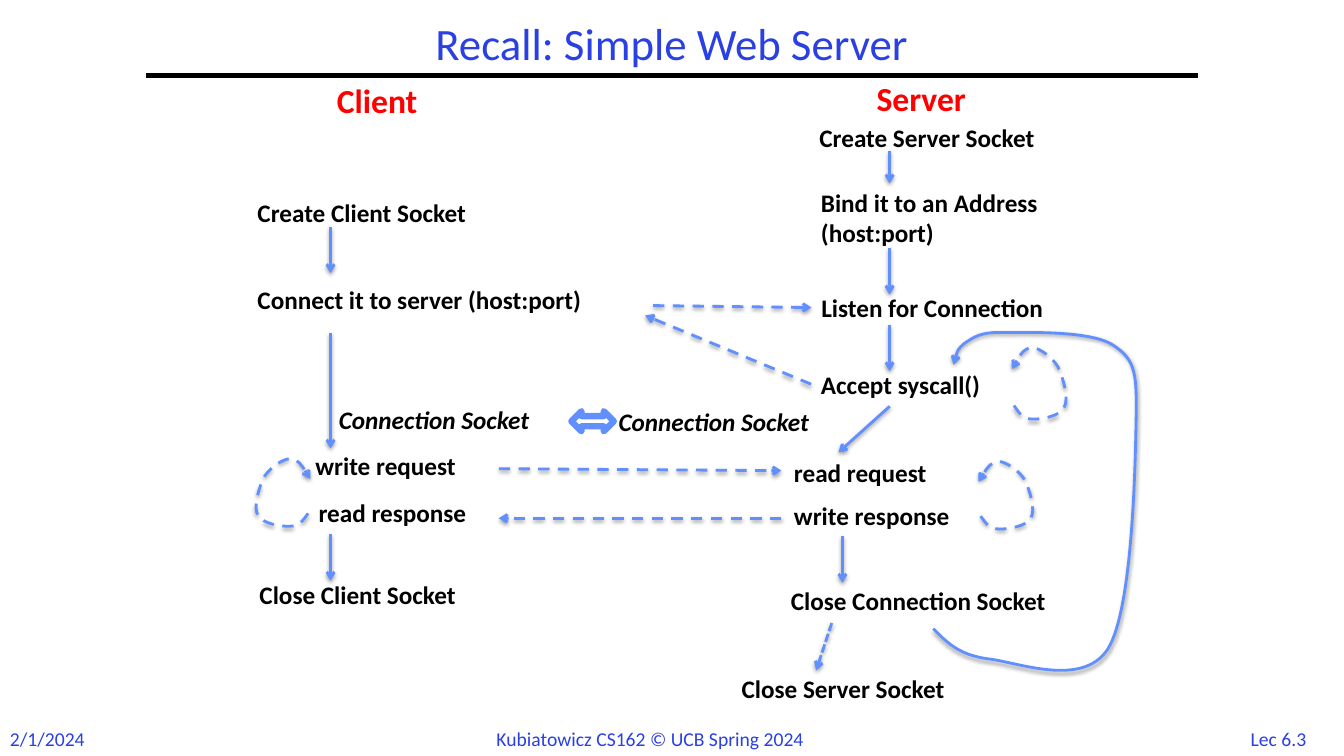
from dataclasses import dataclass

from lxml import etree
from pptx import Presentation
from pptx.dml.color import RGBColor
from pptx.enum.dml import MSO_LINE
from pptx.enum.shapes import MSO_CONNECTOR, MSO_SHAPE
from pptx.enum.text import MSO_ANCHOR, PP_ALIGN
from pptx.oxml.ns import qn
from pptx.util import Cm, Pt

STRAIGHT = MSO_CONNECTOR.STRAIGHT
DOUBLE_ARROW = MSO_SHAPE.LEFT_RIGHT_ARROW
DASH, SHORT_DASH = MSO_LINE.DASH, MSO_LINE.SQUARE_DOT
LEFT, CENTER = PP_ALIGN.LEFT, PP_ALIGN.CENTER
MIDDLE = MSO_ANCHOR.MIDDLE
LEFT_SIDE = 1

Point = tuple[float, float]
Box = tuple[float, float, float, float]


@dataclass(frozen=True)
class Theme:
    font: str = "Calibri"
    blue: RGBColor = RGBColor(0x2A, 0x40, 0xE2)
    flow: RGBColor = RGBColor(0x61, 0x8F, 0xFD)
    red: RGBColor = RGBColor(0xFF, 0, 0)
    black: RGBColor = RGBColor(0, 0, 0)
    white: RGBColor = RGBColor(0xFF, 0xFF, 0xFF)
    title: int = 32
    heading: int = 24
    step: int = 18
    footer: int = 14


THEME = Theme()


@dataclass(frozen=True)
class Label:
    text: str
    x: float
    y: float
    w: float
    h: float = 1.02
    size: int = THEME.step
    color: RGBColor = THEME.black
    bold: bool = True
    italic: bool = False
    align: PP_ALIGN = LEFT


@dataclass(frozen=True)
class Arrow:
    start: Point
    end: Point
    dash: MSO_LINE | None = None
    source: str = ""
    target: str = ""


@dataclass(frozen=True)
class Curve:
    percents: list[Point]
    box: Box
    dash: MSO_LINE | None = None
    mirrored: bool = False


def footer(text: str, x: float, w: float, align: PP_ALIGN = LEFT) -> Label:
    return Label(text, x, 18.19, w, 0.86, THEME.footer, THEME.blue, False, align=align)


def heading(text: str, x: float, y: float, w: float) -> Label:
    return Label(text, x, y, w, 1.27, THEME.heading, THEME.red)


LABELS = [
    footer("Lec 6.3", 30.99, 2.46, CENTER),
    footer("2/1/2024", 0, 2.6),
    footer("Kubiatowicz CS162 © UCB Spring 2024", 12.26, 9.35),
    heading("Client", 8.24, 1.88, 2.9),
    heading("Server", 21.84, 1.83, 3.3),
    Label("Create Client Socket", 6.24, 4.85, 6.76),
    Label("Connect it to server (host:port)", 6.24, 7.04, 9.96),
    Label("write request", 7.7, 11.23, 4.5),
    Label("read response", 7.78, 12.4, 4.85),
    Label("Close Client Socket", 6.29, 14.47, 6.53),
    Label("Create Server Socket", 20.4, 2.97, 6.96),
    Label("Bind it to an Address\n(host:port)", 20.44, 4.6, 7.11, 1.8),
    Label("Listen for Connection", 20.45, 7.24, 7.11),
    Label("Accept syscall()", 20.44, 9.17, 5.41),
    Label("read request", 19.76, 11.4, 4.5),
    Label("write response", 19.76, 12.48, 5.05),
    Label("Close Connection Socket", 19.68, 14.63, 8.26),
    Label("Close Server Socket", 18.44, 16.84, 6.86),
    Label("Connection Socket", 8.29, 10.06, 6.32, italic=True),
    Label("Connection Socket", 15.34, 10.11, 6.32, italic=True),
]

CLIENT_X, SERVER_X, CLOSE_X = 8.33, 22.42, 21.23
DOWNWARD = [
    (CLIENT_X, 5.72, 6.88), (CLIENT_X, 8.38, 11.3), (CLIENT_X, 13.46, 14.63),
    (SERVER_X, 3.81, 4.62), (SERVER_X, 6.25, 7.42), (SERVER_X, 8.18, 9.35),
    (CLOSE_X, 13.51, 14.68),
]
ARROWS = [Arrow((x, top), (x, bottom)) for x, top, bottom in DOWNWARD] + [
    Arrow((SERVER_X, 10.24), (21.13, 11.4)),
    Arrow((20.96, 15.7), (20.57, 16.89), SHORT_DASH),
    Arrow((16.46, 7.7), (20.45, 7.75), DASH, target="Listen for Connection"),
    Arrow((20.44, 9.68), (16.26, 7.95), DASH, source="Accept syscall()"),
    Arrow((12.57, 11.81), (19.69, 11.86), DASH),
    Arrow((19.69, 13.06), (12.57, 13.06), DASH),
]

LOOP = [
    (4, 81), (13, 91), (20, 100), (37, 100),
    (52, 101), (89, 96), (96, 84),
    (106, 72), (94, 42), (85, 27),
    (74, 13), (50, 0), (37, 0),
    (22, 1), (11, 15), (0, 30),
]
ACCEPT_AGAIN = [
    (0, 87.5), (6.5, 91.4), (12.4, 95.2), (26.9, 96.4),
    (41.3, 97.3), (73.6, 105.1), (86.1, 93.5),
    (98, 82.1), (99.5, 42), (100, 27.1),
    (100.5, 12.2), (100, 8.3), (89.1, 3.9),
    (78.6, -0.6), (47.3, 0), (35.3, 0),
    (22.9, -0.3), (19.9, 1.5), (15.9, 3),
    (11.9, 4.8), (10.9, 7.1), (10, 9.5),
]
CURVES = [
    Curve(LOOP, (24.66, 11.63, 1.37, 1.7), DASH),
    Curve(LOOP, (6.45, 11.56, 1.37, 1.7), DASH, mirrored=True),
    Curve(LOOP, (25.5, 8.76, 1.37, 1.8), DASH),
    Curve(ACCEPT_AGAIN, (23.52, 8.38, 5.11, 8.53)),
]


def style_text(tf, size: int, color: RGBColor, bold: bool, italic: bool, align: PP_ALIGN) -> None:
    for p in tf.paragraphs:
        p.alignment = align
        p.font.name, p.font.size = THEME.font, Pt(size)
        p.font.bold, p.font.italic = bold, italic
        p.font.color.rgb = color


def add_label(s, label: Label):
    box = s.shapes.add_textbox(Cm(label.x), Cm(label.y), Cm(label.w), Cm(label.h))
    tf = box.text_frame
    tf.word_wrap = True
    tf.text = label.text
    style_text(tf, label.size, label.color, label.bold, label.italic, label.align)
    return box


def style_flow(shape, dash: MSO_LINE | None) -> None:
    shape.line.color.rgb = THEME.flow
    shape.line.width = Pt(2)
    if dash is not None:
        shape.line.dash_style = dash
    props = shape._element.spPr
    etree.SubElement(props.find(qn("a:ln")), qn("a:tailEnd"), type="arrow")
    effects = etree.SubElement(props, qn("a:effectLst"))
    shadow = etree.SubElement(effects, qn("a:outerShdw"), blurRad=str(Pt(3.1)),
                              dist=str(Pt(1.6)), dir="5400000", rotWithShape="0")
    color = etree.SubElement(shadow, qn("a:srgbClr"), val=str(THEME.black))
    etree.SubElement(color, qn("a:alpha"), val="38000")


def add_line(s, start: Point, end: Point):
    return s.shapes.add_connector(STRAIGHT, *map(Cm, start + end))


def add_arrow(s, arrow: Arrow, boxes: dict) -> None:
    line = add_line(s, arrow.start, arrow.end)
    if arrow.source:
        line.begin_connect(boxes[arrow.source], LEFT_SIDE)
    if arrow.target:
        line.end_connect(boxes[arrow.target], LEFT_SIDE)
    style_flow(line, arrow.dash)


def add_curve(s, curve: Curve) -> None:
    left, top, width, height = map(Cm, curve.box)
    builder = s.shapes.build_freeform(left, top)
    builder.add_line_segments([(left + width, top + height)], close=False)
    shape = builder.convert_to_shape()
    outline = next(shape._element.iter(qn("a:path")))
    outline[:] = []
    for i, (x, y) in enumerate(curve.percents):
        if i % 3 == 1 or i == 0:
            segment = etree.SubElement(outline, qn("a:cubicBezTo" if i else "a:moveTo"))
        across = 100 - x if curve.mirrored else x
        etree.SubElement(segment, qn("a:pt"), x=str(round(width * across / 100)),
                         y=str(round(height * y / 100)))
    shape.fill.background()
    style_flow(shape, curve.dash)


def add_title(s, text: str) -> None:
    title = s.shapes.title
    title.left, title.top, title.width, title.height = map(Cm, (3.67, 0.43, 26.52, 1.47))
    tf = title.text_frame
    tf.text = text
    tf.vertical_anchor = MIDDLE
    style_text(tf, THEME.title, THEME.blue, False, False, CENTER)
    tf.paragraphs[0].line_spacing = 0.9


def add_socket_link(s) -> None:
    link = s.shapes.add_shape(DOUBLE_ARROW, Cm(14.4), Cm(10.36), Cm(1.07), Cm(0.51))
    link.shadow.inherit = False
    link.fill.solid()
    link.fill.fore_color.rgb = THEME.white
    link.line.color.rgb = THEME.flow
    link.line.width = Pt(4.5)


def main() -> None:
    prs = Presentation()
    prs.slide_width, prs.slide_height = Cm(33.87), Cm(19.05)
    s = prs.slides.add_slide(prs.slide_layouts[5])
    add_title(s, "Recall: Simple Web Server")
    rule = add_line(s, (3.67, 1.9), (30.2, 1.9))
    rule.line.color.rgb = THEME.black
    rule.line.width = Pt(3)
    etree.SubElement(rule._element.spPr, qn("a:effectLst"))
    boxes = {label.text: add_label(s, label) for label in LABELS}
    for arrow in ARROWS:
        add_arrow(s, arrow, boxes)
    for curve in CURVES:
        add_curve(s, curve)
    add_socket_link(s)
    prs.save("out.pptx")


if __name__ == "__main__":
    main()
